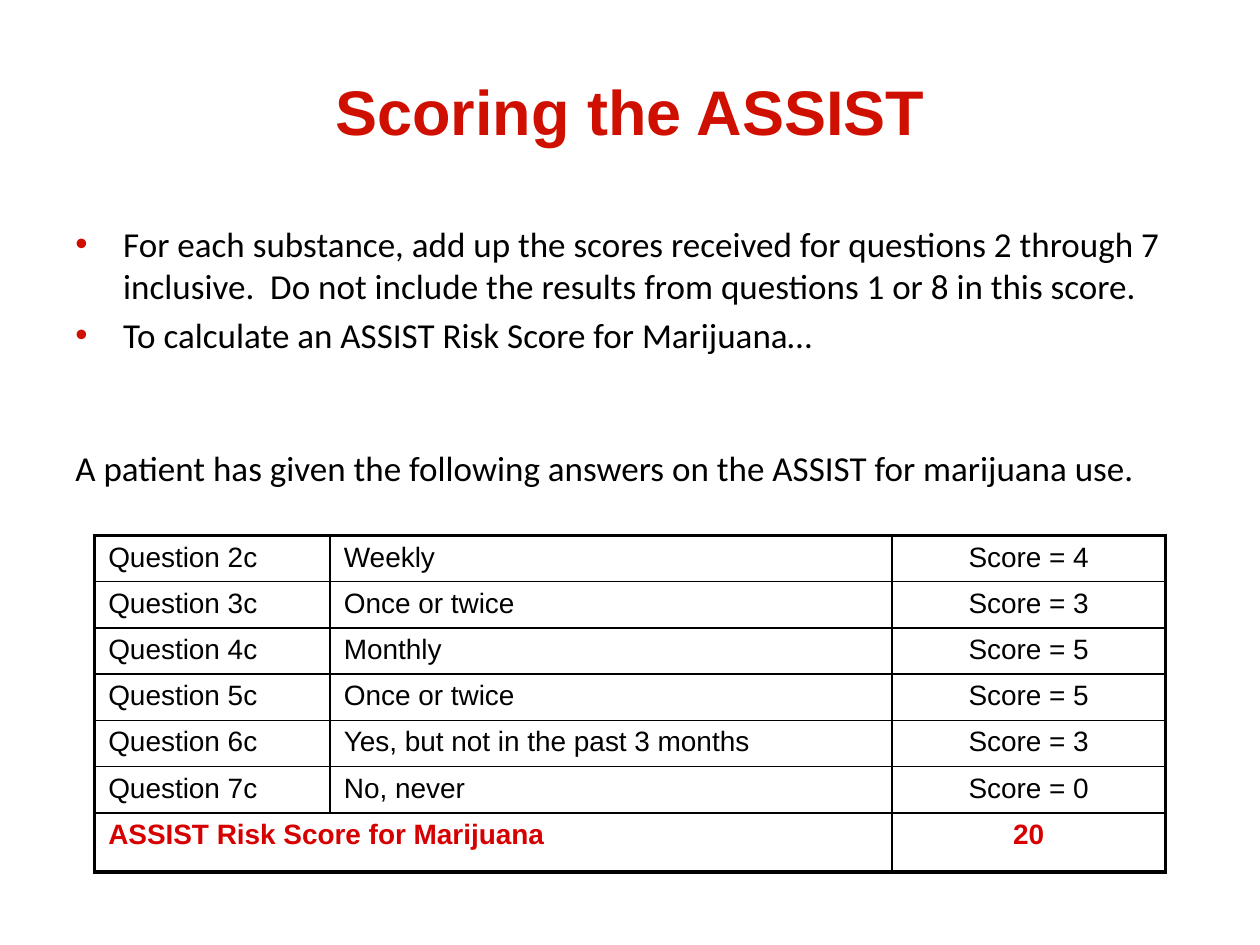
from lxml import etree
from pptx import Presentation
from pptx.dml.color import RGBColor
from pptx.enum.text import MSO_ANCHOR, PP_ALIGN
from pptx.oxml.ns import qn
from pptx.util import Inches, Pt

LEFT, CENTER = PP_ALIGN.LEFT, PP_ALIGN.CENTER
TOP, MIDDLE = MSO_ANCHOR.TOP, MSO_ANCHOR.MIDDLE

BLACK, TITLE_RED, TOTAL_RED = "000000", "CF1001", "D60000"
OUTER, INNER = Pt(2.25), Pt(1)
COLUMN_WIDTHS = (1.87, 4.46, 2.17)
TABLE_HEIGHT, TOTAL_HEIGHT = 2.67, 0.47
BODY_GAP = 4

ANSWERS = (
    ("2c", "Weekly", 4),
    ("3c", "Once or twice", 3),
    ("4c", "Monthly", 5),
    ("5c", "Once or twice", 5),
    ("6c", "Yes, but not in the past 3 months", 3),
    ("7c", "No, never", 0),
)


def color(value):
    return RGBColor.from_string(value)


def write(para, text, size=20, font="Calibri", fill=BLACK, bold=False,
          align=LEFT, before=0):
    para.alignment = align
    para.space_before = Pt(before)
    span = para.add_run()
    span.text = text
    span.font.size = Pt(size)
    span.font.name = font
    span.font.bold = bold
    span.font.color.rgb = color(fill)


def add_bullet(para, fill, indent=0.38):
    properties = para._p.get_or_add_pPr()
    properties.set("marL", str(Inches(indent)))
    properties.set("indent", str(-Inches(indent)))
    bullet_color = etree.SubElement(properties, qn("a:buClr"))
    etree.SubElement(bullet_color, qn("a:srgbClr"), val=fill)
    etree.SubElement(properties, qn("a:buFont"), typeface="Arial")
    etree.SubElement(properties, qn("a:buChar"), char="•")


def add_text_frame(page, left, top, width, height, anchor=TOP):
    box = page.shapes.add_textbox(Inches(left), Inches(top),
                                  Inches(width), Inches(height))
    box.text_frame.word_wrap = True
    box.text_frame.vertical_anchor = anchor
    return box.text_frame


def add_body(page):
    frame = add_text_frame(page, 0.5, 1.72, 9, 4.95)
    bullets = (
        "For each substance, add up the scores received for questions 2 through 7 "
        "inclusive.  Do not include the results from questions 1 or 8 in this score.",
        "To calculate an ASSIST Risk Score for Marijuana…",
    )
    for index, text in enumerate(bullets):
        para = frame.add_paragraph() if index else frame.paragraphs[0]
        write(para, text, before=BODY_GAP if index else 0)
        add_bullet(para, TITLE_RED)
    write(frame.add_paragraph(),
          "A patient has given the following answers on the ASSIST for marijuana use.",
          before=52)


def set_borders(cell, widths):
    """Draw black cell borders; widths maps the sides L, R, T, B in that order."""
    properties = cell._tc.get_or_add_tcPr()
    for side, width in widths.items():
        line = etree.SubElement(properties, qn(f"a:ln{side}"), w=str(width))
        fill = etree.SubElement(line, qn("a:solidFill"))
        etree.SubElement(fill, qn("a:srgbClr"), val=BLACK)


def add_score_table(page):
    total = sum(score for _, _, score in ANSWERS)
    rows = [(f"Question {code}", answer, f"Score = {score}")
            for code, answer, score in ANSWERS]
    rows.append(("ASSIST Risk Score for Marijuana", "", str(total)))
    last_row, last_column = len(rows) - 1, len(COLUMN_WIDTHS) - 1

    table = page.shapes.add_table(len(rows), len(COLUMN_WIDTHS), Inches(0.75),
                                  Inches(4.25), Inches(sum(COLUMN_WIDTHS)),
                                  Inches(TABLE_HEIGHT)).table
    table.first_row = table.horz_banding = False
    for column, width in zip(table.columns, COLUMN_WIDTHS):
        column.width = Inches(width)
    for row in table.rows:
        row.height = Inches((TABLE_HEIGHT - TOTAL_HEIGHT) / len(ANSWERS))
    table.rows[last_row].height = Inches(TOTAL_HEIGHT)
    table.cell(last_row, 0).merge(table.cell(last_row, 1))

    for r, texts in enumerate(rows):
        is_total = r == last_row
        for c, text in enumerate(texts):
            cell = table.cell(r, c)
            if cell.is_spanned:
                continue
            cell.margin_left = cell.margin_right = Inches(0.11)
            set_borders(cell, {
                "L": OUTER if c == 0 else INNER,
                "R": OUTER if c == last_column else INNER,
                "T": OUTER if r == 0 else INNER,
                "B": OUTER if is_total else INNER,
            })
            cell.fill.background()
            write(cell.text_frame.paragraphs[0], text, size=16, font="Arial",
                  fill=TOTAL_RED if is_total else BLACK, bold=is_total,
                  align=CENTER if c == last_column else LEFT)


def main():
    deck = Presentation()
    deck.slide_width, deck.slide_height = Inches(10), Inches(7.5)
    page = deck.slides.add_slide(deck.slide_layouts[6])
    page.background.fill.solid()
    page.background.fill.fore_color.rgb = color("FFFFFF")

    title = add_text_frame(page, 0.5, 0.25, 9, 1.25, anchor=MIDDLE)
    write(title.paragraphs[0], "Scoring the ASSIST", size=36, font="Arial",
          fill=TITLE_RED, bold=True, align=CENTER)
    add_body(page)
    add_score_table(page)
    deck.save("out.pptx")


if __name__ == "__main__":
    main()
